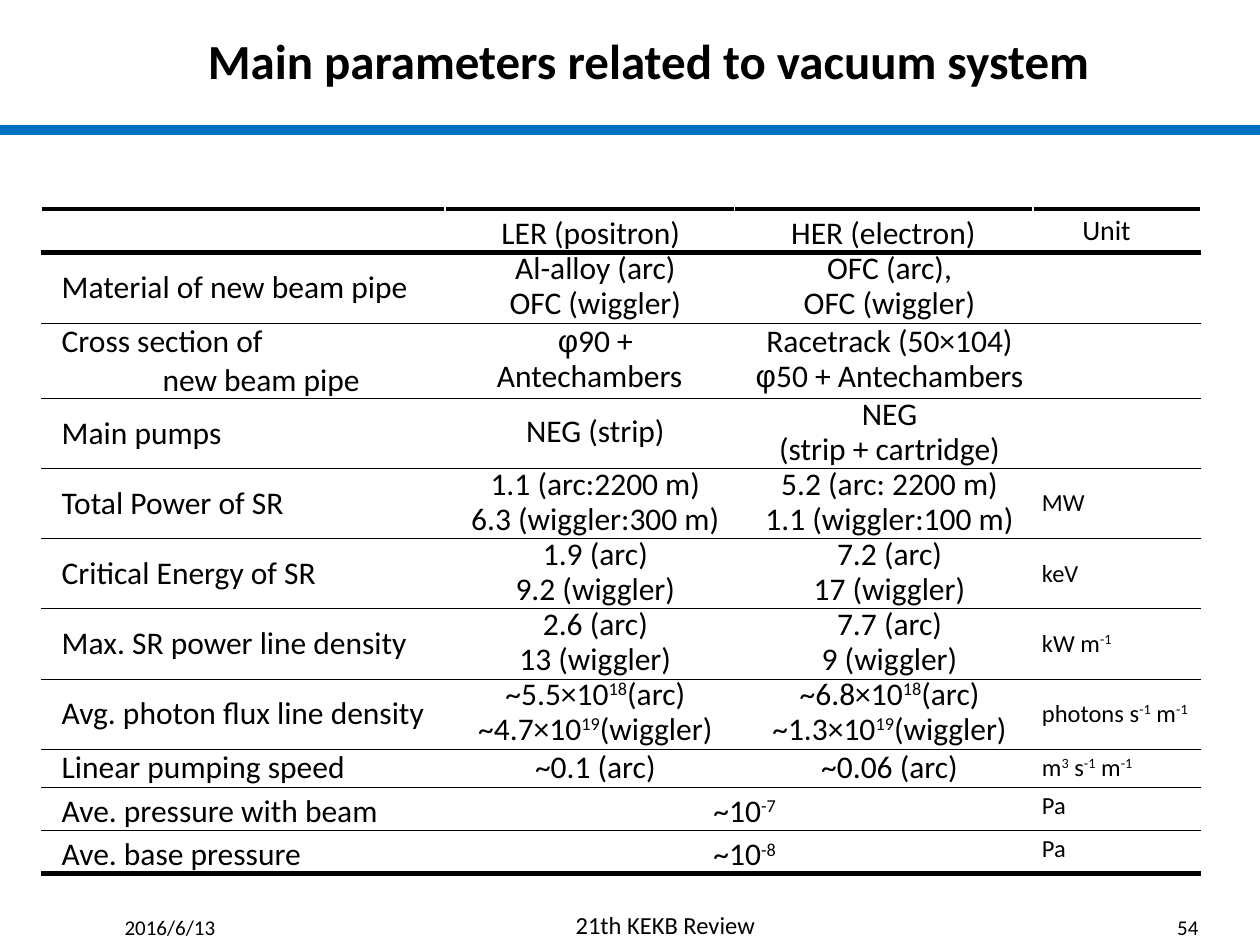
from lxml import etree
from pptx import Presentation
from pptx.dml.color import RGBColor
from pptx.enum.shapes import MSO_CONNECTOR
from pptx.enum.text import MSO_ANCHOR as ANCHOR, PP_ALIGN as ALIGN
from pptx.oxml.ns import qn
from pptx.util import Inches, Pt

COLORS = {"text": "000000", "paper": "FFFFFF", "rule": "0070C0"}
RGB = {name: RGBColor.from_string(value) for name, value in COLORS.items()}


def write(para, text, size, align, bold=False):
    """Fill a paragraph; ^...^ marks superscripts, and φ is set in Arial."""
    para.alignment = align
    font = para.font
    font.name, font.size, font.bold = "Calibri", Pt(size), bold
    font.color.rgb = RGB["text"]
    for i, part in enumerate(text.replace("φ", "^φ^").split("^")):
        if not part:
            continue
        span = para.add_run()
        span.text = part
        if part == "φ":
            span.font.name = "Arial"
        elif i % 2:
            span.font._element.set("baseline", "30000")


def add_border(cell, side, color, width):
    line = etree.SubElement(cell._tc.get_or_add_tcPr(), qn(f"a:ln{side}"), w=str(Pt(width)))
    fill = etree.SubElement(line, qn("a:solidFill"))
    etree.SubElement(fill, qn("a:srgbClr"), val=COLORS[color])


deck = Presentation()
deck.slide_width, deck.slide_height = Inches(10), Inches(7.5)
page = deck.slides.add_slide(deck.slide_layouts[6])

# Title and footer: text, left, top, width, height, size, alignment, bold
for text, left, top, width, height, size, align, bold in [
    ("Main parameters related to vacuum system", 0.49, 0.04, 9.31, 0.87, 28, ALIGN.CENTER, True),
    ("2016/6/13", 0.89, 7.21, 1.52, 0.3, 12, ALIGN.LEFT, False),
    ("21th KEKB Review", 4.47, 7.17, 2.29, 0.34, 14, ALIGN.LEFT, False),
    ("54", 9.21, 7.21, 0.4, 0.3, 12, ALIGN.RIGHT, False),
]:
    box = page.shapes.add_textbox(Inches(left), Inches(top), Inches(width), Inches(height))
    frame = box.text_frame
    frame.word_wrap = True
    frame.vertical_anchor = ANCHOR.MIDDLE if bold else ANCHOR.TOP
    write(frame.paragraphs[0], text, size, align, bold)

# Parameter table: label, LER, HER, unit
ROWS = [
    ("", "LER (positron)", "HER (electron)", "Unit"),
    ("Material of new beam pipe", "Al-alloy (arc)\nOFC (wiggler)", "OFC (arc),\nOFC (wiggler)", ""),
    ("Cross section of\nnew beam pipe", "φ90 + Antechambers",
     "Racetrack (50×104)\nφ50 + Antechambers", ""),
    ("Main pumps", "NEG (strip)", "NEG\n(strip + cartridge)", ""),
    ("Total Power of SR", "1.1 (arc:2200 m)\n6.3 (wiggler:300 m)",
     "5.2 (arc: 2200 m)\n1.1 (wiggler:100 m)", "MW"),
    ("Critical Energy of SR", "1.9 (arc)\n9.2 (wiggler)", "7.2 (arc)\n17 (wiggler)", "keV"),
    ("Max. SR power line density", "2.6 (arc)\n13 (wiggler)", "7.7 (arc)\n9 (wiggler)", "kW m^-1^"),
    ("Avg. photon flux line density", "~5.5×10^18^(arc)\n~4.7×10^19^(wiggler)",
     "~6.8×10^18^(arc)\n~1.3×10^19^(wiggler)", "photons s^-1^ m^-1^"),
    ("Linear pumping speed", "~0.1 (arc)", "~0.06 (arc)", "m^3^ s^-1^ m^-1^"),
    ("Ave. pressure with beam", "~10^-7^", "", "Pa"),
    ("Ave. base pressure", "~10^-8^", "", "Pa"),
]
HEIGHTS = [0.27] + [0.53] * 7 + [0.27, 0.31, 0.31]
WIDTHS = [3.2, 2.3, 2.37, 1.33]
LAST = len(ROWS) - 1
MERGED = (LAST - 1, LAST)
SPACED = (0, *MERGED)
HEAVY, FINE = 3, 0.25

table = page.shapes.add_table(
    len(ROWS), len(WIDTHS), Inches(0.33), Inches(1.66), Inches(sum(WIDTHS)), Inches(sum(HEIGHTS))
).table
table.first_row = table.horz_banding = False
for column, width in zip(table.columns, WIDTHS):
    column.width = Inches(width)
for row, height in zip(table.rows, HEIGHTS):
    row.height = Inches(height)

for r, texts in enumerate(ROWS):
    for c, text in enumerate(texts):
        cell = table.cell(r, c)
        cell.margin_left = cell.margin_right = Inches(0.07)
        cell.margin_top = cell.margin_bottom = 0
        at_top = (r in SPACED and c == 3) or (r in MERGED and c == 0)
        cell.vertical_anchor = ANCHOR.TOP if at_top else ANCHOR.MIDDLE

        add_border(cell, "L", "paper", 1)
        add_border(cell, "R", "paper", 1)
        add_border(cell, "T", "text", HEAVY if r < 2 else FINE)
        add_border(cell, "B", "text", HEAVY if r in (0, LAST) else FINE)
        cell.fill.solid()
        cell.fill.fore_color.rgb = RGB["paper"]

        is_value = c in (1, 2)
        size = 18 if c < 3 else 16 if r == 0 else 14
        align = ALIGN.CENTER if is_value and r > 0 else ALIGN.JUSTIFY
        for i, line in enumerate(text.split("\n")):
            para = cell.text_frame.paragraphs[0] if i == 0 else cell.text_frame.add_paragraph()
            if r == 0:
                indent = 0.32 if c == 3 else 0.38
            elif c == 0 and i:
                indent = 0.89
            else:
                indent = 0 if c == 3 else 0.09
            para._p.get_or_add_pPr().set("indent", str(Inches(indent)))
            if r in SPACED:
                para.line_spacing = 1.15
            elif is_value and r < 8:
                para.line_spacing = Pt(20)
            write(para, line, size, align)

for r in MERGED:
    table.cell(r, 1).merge(table.cell(r, 2))

# Rule under the title
rule = page.shapes.add_connector(MSO_CONNECTOR.STRAIGHT, 0, Inches(1.03), Inches(10), Inches(1.03))
rule.line.color.rgb = RGB["rule"]
rule.line.width = Pt(6)
etree.SubElement(rule._element.spPr, qn("a:effectLst"))

deck.save("out.pptx")
